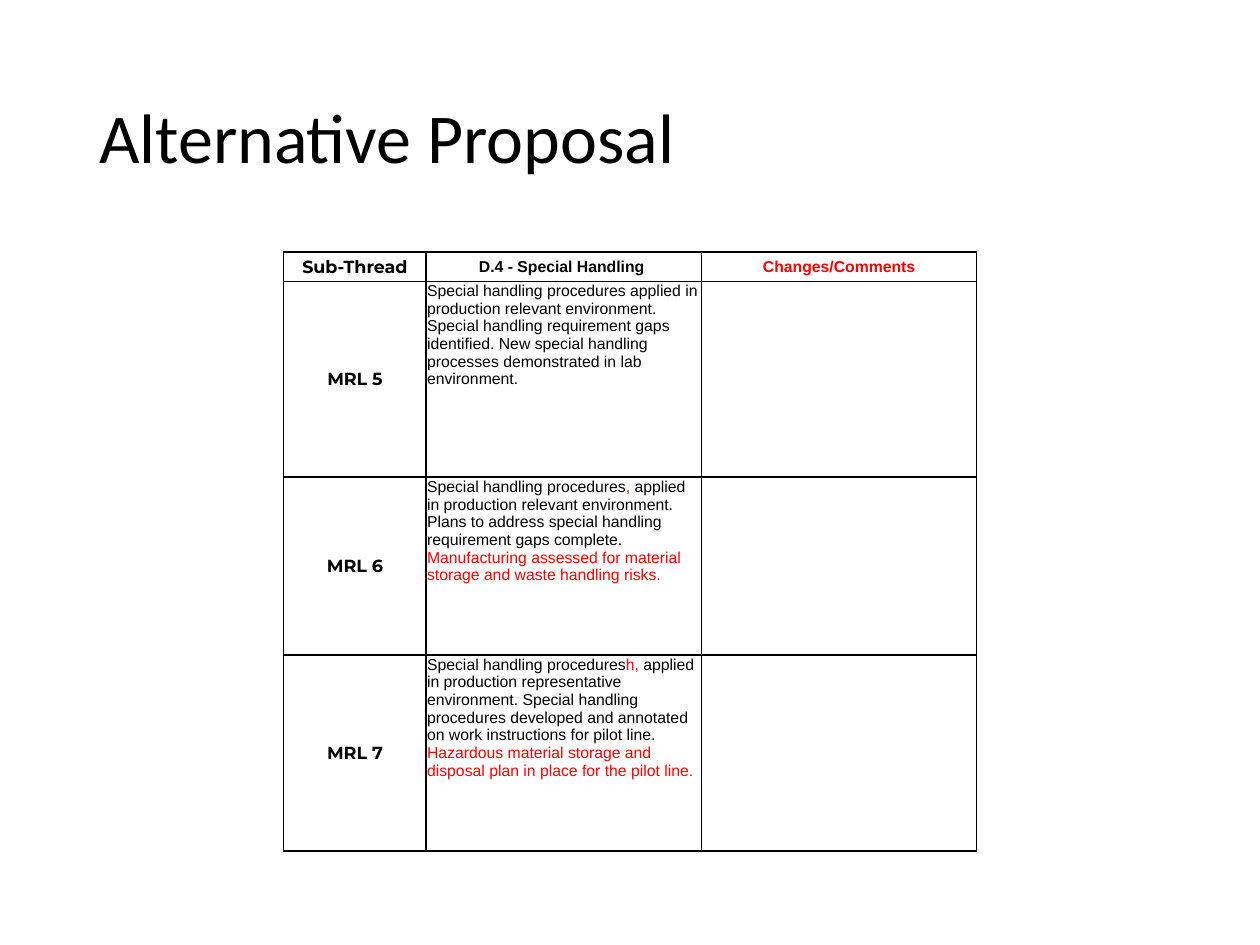
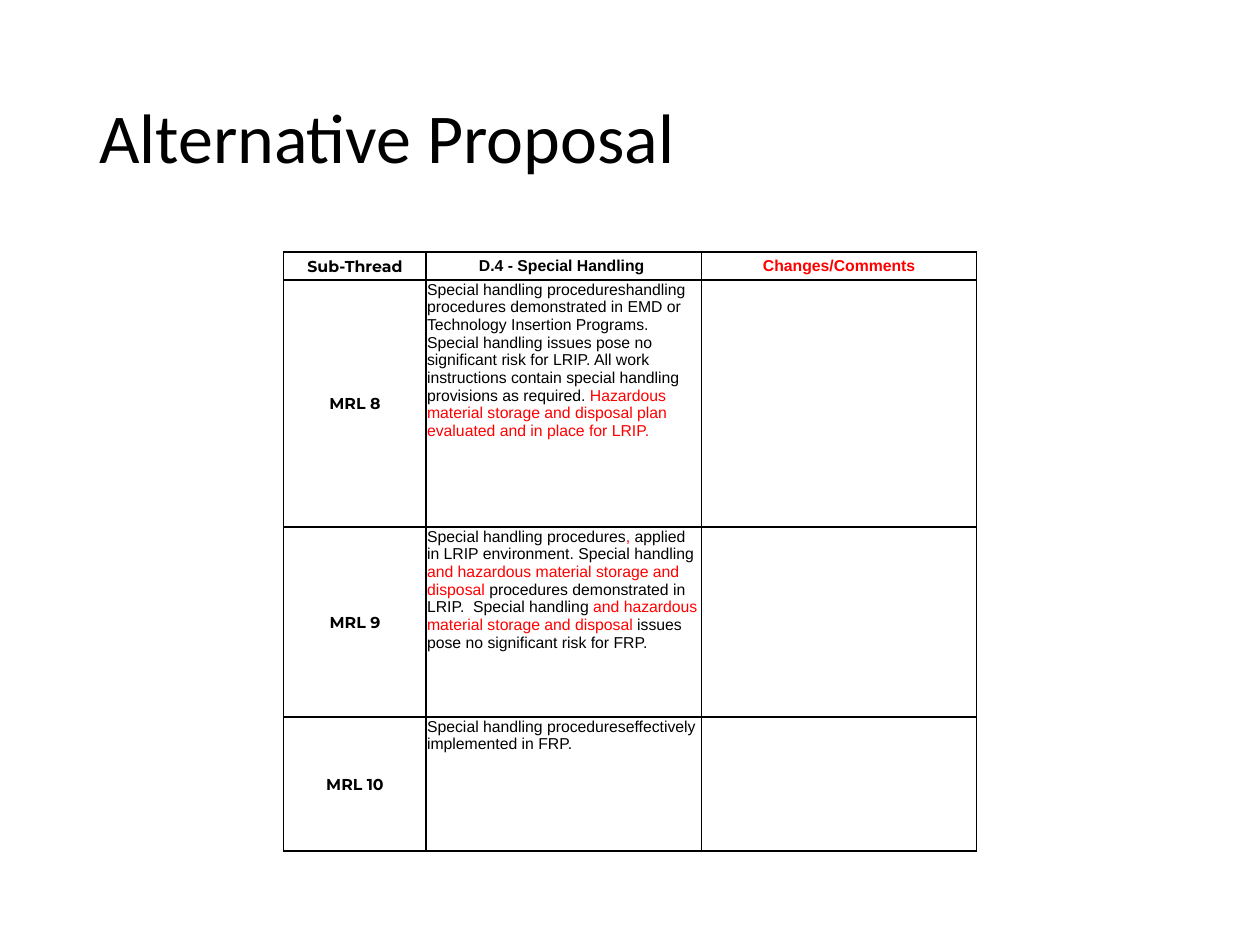
from dataclasses import dataclass

from lxml.etree import SubElement
from pptx import Presentation
from pptx.dml.color import RGBColor
from pptx.enum.text import MSO_ANCHOR, PP_ALIGN
from pptx.oxml.ns import qn
from pptx.util import Cm, Pt


@dataclass(frozen=True)
class Theme:
    ink: str = "000000"
    change: str = "FF0000"
    paper: str = "FFFFFF"
    title_font: str = "Calibri"
    label_font: str = "Montserrat"
    body_font: str = "Arial"
    title_size: int = 40
    body_size: int = 9
    border_width: int = 1


theme = Theme()


def write_spans(para, spans, font, size, bold=False):
    for text, color in spans:
        span = para.add_run()
        span.text = text
        span.font.name = font
        span.font.size = Pt(size)
        span.font.bold = bold
        span.font.color.rgb = RGBColor.from_string(color)


def draw_cell_frame(cell):
    properties = cell._tc.get_or_add_tcPr()
    for side in ("a:lnL", "a:lnR", "a:lnT", "a:lnB"):
        line = SubElement(properties, qn(side), w=str(Pt(theme.border_width)))
        fill = SubElement(line, qn("a:solidFill"))
        SubElement(fill, qn("a:srgbClr"), val=theme.ink)
    cell.fill.solid()
    cell.fill.fore_color.rgb = RGBColor.from_string(theme.paper)
    cell.margin_left = cell.margin_right = cell.margin_top = Cm(0.02)
    cell.margin_bottom = Cm(0)


column_widths = (2.87, 5.55, 5.55)
hazardous = "and hazardous material storage and disposal "

# Each criterion alternates between unchanged and changed wording.
proposals = [
    {
        "label_size": 10,
        "row_heights": (0.59, 3.95, 3.58, 3.96),
        "criteria": {
            "MRL 5": [
                "Special handling procedures applied in production relevant environment. "
                "Special handling requirement gaps identified. New special handling "
                "processes demonstrated in lab environment.",
            ],
            "MRL 6": [
                "Special handling procedures",
                ",",
                " applied in production relevant environment. Plans to address special "
                "handling requirement gaps complete. ",
                "Manufacturing assessed for material storage and waste handling risks.",
            ],
            "MRL 7": [
                "Special handling procedures",
                "h,",
                " applied in production representative environment. Special handling "
                "procedures developed and annotated on work instructions for pilot line. ",
                "Hazardous material storage and disposal plan in place for the pilot line.",
            ],
        },
    },
    {
        "label_size": 9,
        "row_heights": (0.56, 4.98, 3.83, 2.71),
        "criteria": {
            "MRL 8": [
                "Special handling procedureshandling procedures demonstrated in EMD or "
                "Technology Insertion Programs. Special handling issues pose no "
                "significant risk for LRIP. All work instructions contain special "
                "handling provisions as required. ",
                "Hazardous material storage and disposal plan evaluated and in place "
                "for LRIP.",
            ],
            "MRL 9": [
                "Special handling procedures",
                ",",
                " applied in LRIP environment. Special handling ",
                hazardous,
                "procedures demonstrated in LRIP.  Special handling ",
                hazardous,
                "issues pose no significant risk for FRP.",
            ],
            "MRL 10": [
                "Special handling procedureseffectively implemented in FRP.",
            ],
        },
    },
]

deck = Presentation()
deck.slide_width = Cm(25.4)
deck.slide_height = Cm(19.05)

for proposal in proposals:
    page = deck.slides.add_slide(deck.slide_layouts[6])

    box = page.shapes.add_textbox(Cm(1.75), Cm(1.01), Cm(21.9), Cm(3.68))
    box.text_frame.word_wrap = True
    box.text_frame.vertical_anchor = MSO_ANCHOR.MIDDLE
    para = box.text_frame.paragraphs[0]
    para.line_spacing = 0.9
    write_spans(para, [("Alternative Proposal", theme.ink)], theme.title_font, theme.title_size)

    heights = proposal["row_heights"]
    table = page.shapes.add_table(
        len(heights), len(column_widths),
        Cm(5.72), Cm(5.08), Cm(sum(column_widths)), Cm(sum(heights)),
    ).table
    table.first_row = False
    table.horz_banding = False
    for column, width in zip(table.columns, column_widths):
        column.width = Cm(width)
    for row, height in zip(table.rows, heights):
        row.height = Cm(height)
    for cell in table.iter_cells():
        draw_cell_frame(cell)

    headings = [
        ("Sub-Thread", theme.ink),
        ("D.4 - Special Handling ", theme.ink),
        ("Changes/Comments", theme.change),
    ]
    centred = [(0, number, heading) for number, heading in enumerate(headings)]
    centred += [(number, 0, (level, theme.ink)) for number, level in enumerate(proposal["criteria"], 1)]
    for row_number, column_number, label in centred:
        cell = table.cell(row_number, column_number)
        cell.vertical_anchor = MSO_ANCHOR.MIDDLE
        para = cell.text_frame.paragraphs[0]
        para.alignment = PP_ALIGN.CENTER
        if column_number == 0:
            write_spans(para, [label], theme.label_font, proposal["label_size"], bold=True)
        else:
            write_spans(para, [label], theme.body_font, theme.body_size, bold=True)

    for row_number, wording in enumerate(proposal["criteria"].values(), 1):
        para = table.cell(row_number, 1).text_frame.paragraphs[0]
        spans = [(text, (theme.ink, theme.change)[number % 2]) for number, text in enumerate(wording)]
        write_spans(para, spans, theme.body_font, theme.body_size)

deck.save("out.pptx")
